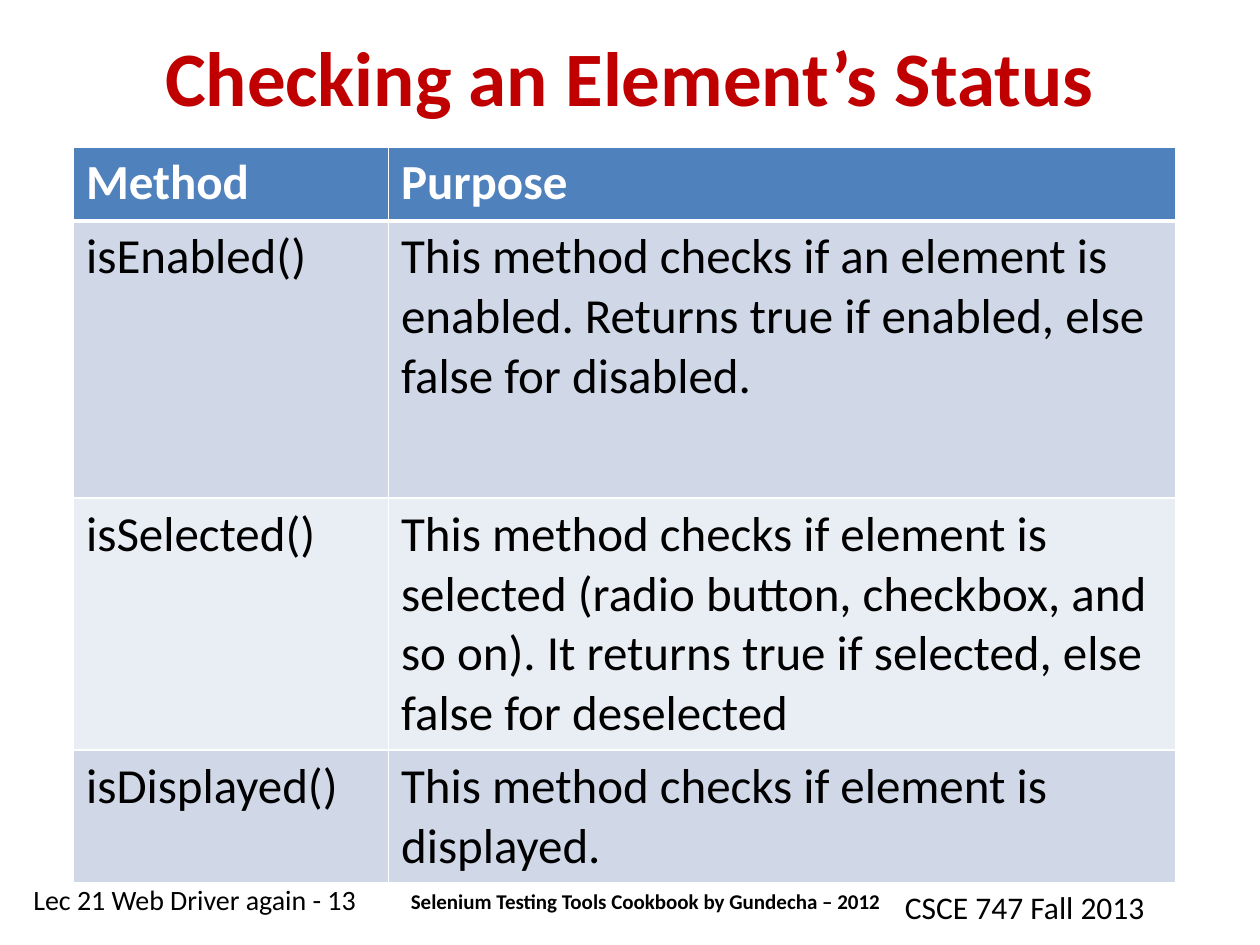
from lxml import etree
from pptx import Presentation
from pptx.dml.color import RGBColor
from pptx.enum.text import MSO_ANCHOR, PP_ALIGN
from pptx.oxml.ns import qn
from pptx.util import Inches, Pt

LEFT, CENTER = PP_ALIGN.LEFT, PP_ALIGN.CENTER
TOP, MIDDLE = MSO_ANCHOR.TOP, MSO_ANCHOR.MIDDLE

BLACK = RGBColor(0x00, 0x00, 0x00)
WHITE = RGBColor(0xFF, 0xFF, 0xFF)
RED = RGBColor(0xC0, 0x00, 0x00)
HEADER_BLUE = RGBColor(0x4F, 0x81, 0xBD)
BAND_COLORS = (RGBColor(0xE9, 0xED, 0xF4), RGBColor(0xD0, 0xD8, 0xE8))

FONT = "Calibri"
TITLE_ONLY = 5
UNIT = Inches(1) / 12  # grid of 120 columns by 90 rows

METHODS = [
    ("Method", "Purpose"),
    ("isEnabled()", "This method checks if an element is enabled. "
                    "Returns true if enabled, else false for disabled."),
    ("isSelected()", "This method checks if element is selected "
                     "(radio button, checkbox, and so on). It returns true "
                     "if selected, else false for deselected"),
    ("isDisplayed()", "This method checks if element is displayed."),
]
COLUMN_WIDTHS = (30, 75)
ROW_HEIGHTS = (7.05, 26.4, 24, 12.6)


def grid(units):
    return round(units * UNIT)


class SlideBuilder:
    def __init__(self, presentation):
        layout = presentation.slide_layouts[TITLE_ONLY]
        self.slide = presentation.slides.add_slide(layout)

    def add_run(self, text_frame, text, size, color=BLACK, bold=False,
                align=LEFT):
        paragraph = text_frame.paragraphs[0]
        paragraph.alignment = align
        run = paragraph.add_run()
        run.text = text
        run.font.color.rgb = color
        font_format = {"name": FONT, "size": Pt(size), "bold": bold}
        for name, value in font_format.items():
            setattr(run.font, name, value)

    def place(self, shape, column, row, width, height):
        box = {"left": column, "top": row, "width": width, "height": height}
        for name, value in box.items():
            setattr(shape, name, grid(value))

    def title(self, text, box):
        shape = self.slide.shapes.title
        self.place(shape, *box)
        shape.text_frame.vertical_anchor = MIDDLE
        self.add_run(shape.text_frame, text, 44, RED, True, CENTER)

    def text(self, text, box, size, wrap=True, anchor=TOP, **style):
        shape = self.slide.shapes.add_textbox(*map(grid, box))
        shape.text_frame.word_wrap = wrap
        shape.text_frame.vertical_anchor = anchor
        self.add_run(shape.text_frame, text, size, **style)

    def borders(self, cell, **widths):
        """Draw white cell borders; widths are points keyed L, R, T and B."""
        properties = cell._tc.get_or_add_tcPr()
        for side, width in widths.items():
            line = etree.SubElement(properties, qn(f"a:ln{side}"),
                                    w=str(Pt(width)))
            fill = etree.SubElement(line, qn("a:solidFill"))
            etree.SubElement(fill, qn("a:srgbClr"), val=str(WHITE))

    def table(self, rows, column, row, widths, heights):
        frame = self.slide.shapes.add_table(
            len(rows), len(widths), grid(column), grid(row),
            grid(sum(widths)), grid(sum(heights)))
        table = frame.table
        for table_column, width in zip(table.columns, widths):
            table_column.width = grid(width)
        for index, (texts, height) in enumerate(zip(rows, heights)):
            table.rows[index].height = grid(height)
            header = index == 0
            for cell, text in zip(table.rows[index].cells, texts):
                self.borders(cell, L=1, R=1, T=3 if index == 1 else 1,
                             B=3 if header else 1)
                cell.fill.solid()
                cell.fill.fore_color.rgb = (
                    HEADER_BLUE if header else BAND_COLORS[index % 2])
                self.add_run(cell.text_frame, text, 28,
                             WHITE if header else BLACK, header)


def main():
    presentation = Presentation()
    presentation.slide_width = grid(120)
    presentation.slide_height = grid(90)

    builder = SlideBuilder(presentation)
    builder.text("Lec 21 Web Driver again - 13", (2, 83.5, 37, 4.4), 16)
    builder.text("CSCE 747 Fall 2013", (85, 84, 25.6, 4.8), 18, wrap=False)
    builder.title("Checking an Element’s Status", (6, 2, 108, 10.4))
    builder.text("Selenium Testing Tools Cookbook by Gundecha – 2012",
                 (37, 83.4, 49, 4.8), 12, anchor=MIDDLE, bold=True,
                 align=CENTER)
    builder.table(METHODS, 7, 14, COLUMN_WIDTHS, ROW_HEIGHTS)

    presentation.save("out.pptx")


if __name__ == "__main__":
    main()
